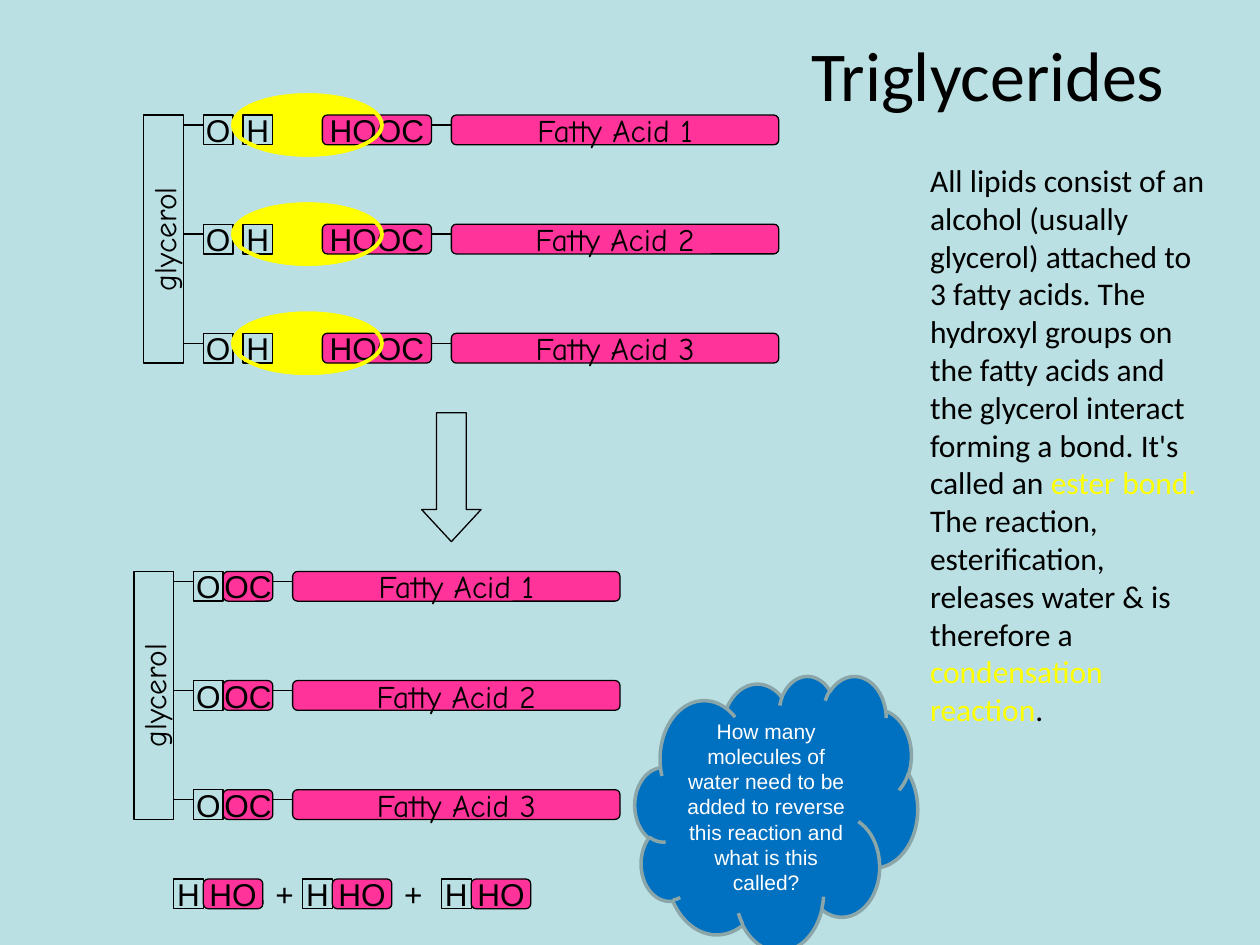
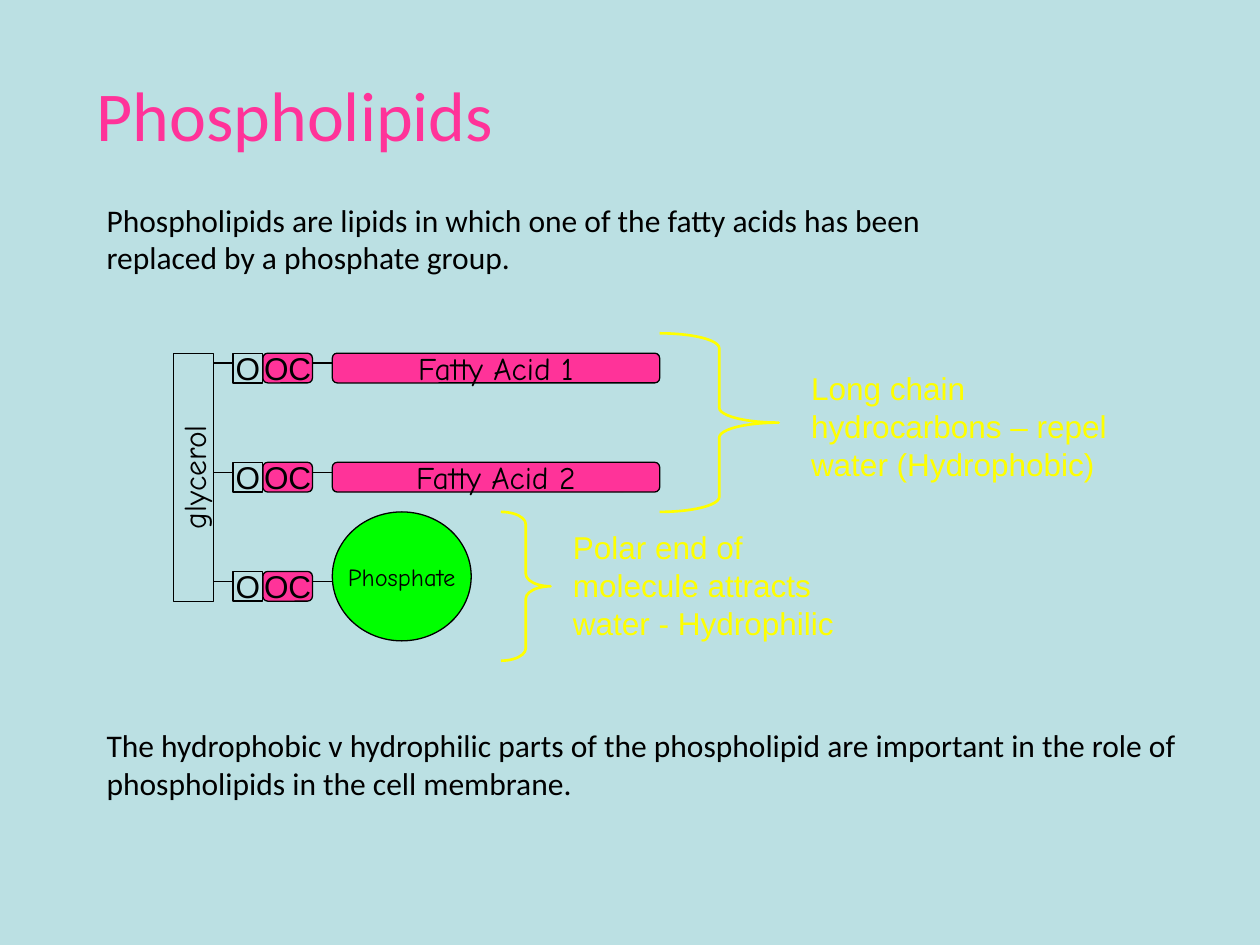
from typing import NamedTuple, Optional

from pptx import Presentation
from pptx import util as u
from pptx.dml.color import RGBColor
from pptx.enum import shapes, text
from pptx.oxml import parse_xml
from pptx.oxml.ns import nsdecls

PALE = RGBColor(0xBB, 0xE0, 0xE3)
PINK = RGBColor(0xFF, 0x33, 0x99)
YELLOW = RGBColor(0xFF, 0xFF, 0x00)
GREEN = RGBColor(0x00, 0xFF, 0x00)
BLUE = RGBColor(0x00, 0x70, 0xC0)
GREY = RGBColor(0x8A, 0xA6, 0xA8)
BLACK = RGBColor(0x00, 0x00, 0x00)
WHITE = RGBColor(0xFF, 0xFF, 0xFF)

ATOM_FONT, PROSE_FONT, NAME_FONT = "Arial", "Calibri", "Comic Neue"
SHAPE = shapes.MSO_SHAPE

CELL_MM = 2  # the slide is 127 columns wide
BAR = 3  # height of an atom or a chain
PITCH = 11  # rows from one chain to the next
BACKBONE_COLS, BACKBONE_ROWS = 4, 25
CHAIN_COLS = 33


class Box(NamedTuple):
    col: float
    row: float
    cols: float
    rows: float


class Look(NamedTuple):
    kind: shapes.MSO_SHAPE
    fill: Optional[RGBColor]
    line: RGBColor = BLACK
    weight: float = 0.75
    adjust: tuple[float, ...] = ()


class Type(NamedTuple):
    font: str
    size: int = 18
    color: RGBColor = BLACK


class Part(NamedTuple):
    """A labelled piece of a molecule, placed in columns from its left edge."""
    label: str
    col: float
    cols: float
    look: Look


class Bond(NamedTuple):
    start: float
    end: float


ATOM = Look(SHAPE.RECTANGLE, PALE)
PINK_BAR = Look(SHAPE.ROUNDED_RECTANGLE, PINK, adjust=(0.167,))
ARROW = Look(SHAPE.DOWN_ARROW, PALE, adjust=(0.5, 0.54))
HIGHLIGHT = Look(SHAPE.OVAL, YELLOW, YELLOW, 2.25)
RING = HIGHLIGHT._replace(fill=None)
PHOSPHATE = Look(SHAPE.OVAL, GREEN)
CLOUD = Look(SHAPE.CLOUD, BLUE, GREY, 2)
BRACE = Look(SHAPE.RIGHT_BRACE, None, YELLOW, 1.5)

ATOM_TYPE = Type(ATOM_FONT)
NAME_TYPE = Type(NAME_FONT)
PROSE = Type(PROSE_FONT)
TITLE = Type(PROSE_FONT, 40)
NOTE = Type(ATOM_FONT, color=YELLOW)

OXYGEN = Part("O", 6, BAR, ATOM)
HYDROGEN = Part("H", 10, BAR, ATOM)
ACID_GROUP = Part("HOOC", 18, 11, PINK_BAR)
ESTER_GROUP = Part("OC", 9, 5, PINK_BAR)
FREE_BONDS = (Bond(4, 6), Bond(9, 10), Bond(29, 31))
ESTER_BONDS = (Bond(4, 6), Bond(14, 16))
FREE_CHAIN, ESTER_CHAIN = 31, 16


def cells(count: float) -> u.Length:
    return u.Mm(count * CELL_MM)


def place(box: Box) -> list[u.Length]:
    return [cells(count) for count in box]


def set_type(font, style: Type) -> None:
    font.name, font.size = style.font, u.Pt(style.size)
    font.color.rgb = style.color


def add_shape(page, box: Box, look: Look, label: str = "",
              style: Type = ATOM_TYPE, wrap: bool = False):
    shape = page.shapes.add_shape(look.kind, *place(box))
    shape.shadow.inherit = False
    for index, value in enumerate(look.adjust):
        shape.adjustments[index] = value
    if look.fill is None:
        shape.fill.background()
    else:
        shape.fill.solid()
        shape.fill.fore_color.rgb = look.fill
    shape.line.color.rgb = look.line
    shape.line.width = u.Pt(look.weight)
    if label:
        frame = shape.text_frame
        frame.word_wrap = wrap
        frame.vertical_anchor = text.MSO_ANCHOR.MIDDLE
        para = frame.paragraphs[0]
        para.text = label
        para.alignment = text.PP_ALIGN.CENTER
        set_type(para.font, style)
    return shape


def add_text(page, box: Box, style: Type, *pieces: str) -> None:
    """Write the pieces in one paragraph, every second one in yellow."""
    frame = page.shapes.add_textbox(*place(box)).text_frame
    frame.word_wrap = True
    frame.auto_size = text.MSO_AUTO_SIZE.SHAPE_TO_FIT_TEXT
    para = frame.paragraphs[0]
    set_type(para.font, style)
    for index, piece in enumerate(pieces):
        span = para.add_run()
        span.text = piece
        if index % 2:
            span.font.color.rgb = YELLOW


def add_bond(page, start: float, end: float, row: float) -> None:
    bond = page.shapes.add_connector(
        shapes.MSO_CONNECTOR.STRAIGHT,
        cells(start), cells(row), cells(end), cells(row))
    bond.line.color.rgb = BLACK
    bond.line.width = u.Pt(0.75)
    bond.element.spPr.append(parse_xml(f"<a:effectLst {nsdecls('a')}/>"))


def add_part(page, part: Part, left: float, row: float) -> None:
    add_shape(page, Box(left + part.col, row, part.cols, BAR), part.look, part.label)


def add_glycerol(page, left: float, top: float) -> None:
    """Draw the upright backbone as a wide bar turned a quarter left."""
    shift = (BACKBONE_ROWS - BACKBONE_COLS) / 2
    box = Box(left - shift, top + shift, BACKBONE_ROWS, BACKBONE_COLS)
    add_shape(page, box, ATOM, "glycerol", NAME_TYPE).rotation = 270


def add_molecule(page, left: float, top: float, bonds: tuple[Bond, ...],
                 chain_col: float, chains: int = 3, free: bool = False) -> None:
    """Draw glycerol with three branches; free acids are not yet joined to it."""
    add_glycerol(page, left, top)
    for index in range(3):
        row = top + index * PITCH
        for bond in bonds:
            add_bond(page, left + bond.start, left + bond.end, row + 1)
        add_part(page, OXYGEN, left, row)
        if free:
            oval = Box(left + 9, row - 2, 15, 6)
            add_shape(page, oval, HIGHLIGHT)
            add_part(page, HYDROGEN, left, row)
            add_part(page, ACID_GROUP, left, row)
            add_shape(page, oval, RING)
        else:
            add_part(page, ESTER_GROUP, left, row)
        if index < chains:
            add_shape(page, Box(left + chain_col, row, CHAIN_COLS, BAR),
                      PINK_BAR, f"Fatty Acid {index + 1}", NAME_TYPE)


def add_page(deck):
    page = deck.slides.add_slide(deck.slide_layouts[6])
    page.background.fill.solid()
    page.background.fill.fore_color.rgb = PALE
    return page


def add_triglycerides(deck) -> None:
    page = add_page(deck)
    add_molecule(page, 14.5, 11.6, FREE_BONDS, FREE_CHAIN, free=True)
    add_shape(page, Box(42.5, 41.6, 6, 13), ARROW)
    add_molecule(page, 13.5, 57.6, ESTER_BONDS, ESTER_CHAIN)

    water_row = 88.6
    for left in (17.5, 30.5, 44.5):
        add_part(page, Part("H", 0, BAR, ATOM), left, water_row)
        add_part(page, Part("HO", BAR, 6, PINK_BAR), left, water_row)
    for left in (26.5, 39.5):
        add_text(page, Box(left, water_row - 1, 3, 5), ATOM_TYPE, "+")

    add_text(page, Box(92.5, 15.6, 31, 58.9), PROSE,
             "All lipids consist of an alcohol (usually glycerol) attached to "
             "3 fatty acids. The hydroxyl groups on the fatty acids and the "
             "glycerol interact forming a bond. It's called an ",
             "ester bond. ",
             "The reaction, esterification, releases water & is therefore a ",
             "condensation reaction", ".")
    add_text(page, Box(80.5, 2.6, 46.5, 9.8), TITLE, "Triglycerides")
    add_shape(page, Box(64, 68.1, 28.5, 27.7), CLOUD,
              "How many molecules of water need to be added to reverse this "
              "reaction and what is this called?",
              Type(ATOM_FONT, 12, WHITE), wrap=True)


def add_phospholipids(deck) -> None:
    page = add_page(deck)
    add_text(page, Box(8.5, 6.6, 53, 9.8), TITLE._replace(color=PINK), "Phospholipids")
    add_text(page, Box(9.5, 19.6, 95, 8.9), PROSE,
             "Phospholipids are lipids in which one of the fatty acids has "
             "been replaced by a phosphate group.")
    add_molecule(page, 17.5, 35.6, ESTER_BONDS, ESTER_CHAIN, chains=2)
    add_shape(page, Box(33.5, 51.6, 14, 13), PHOSPHATE, "Phosphate", Type(NAME_FONT, 14))
    add_shape(page, Box(66.5, 33.6, 12, 18), BRACE._replace(adjust=(0.125, 0.5)))
    add_shape(page, Box(50.5, 51.6, 5, 15), BRACE._replace(adjust=(0.25, 0.5)))
    add_text(page, Box(80.5, 36.6, 33, 12.7), NOTE,
             "Long chain hydrocarbons – repel water (Hydrophobic)")
    add_text(page, Box(56.5, 52.6, 33, 12.7), NOTE,
             "Polar end of molecule attracts water - Hydrophilic")
    add_text(page, Box(9.5, 72.6, 113, 8.9), PROSE,
             "The hydrophobic v hydrophilic parts of the phospholipid are "
             "important in the role of phospholipids in the cell membrane.")


def main() -> None:
    deck = Presentation()
    deck.slide_width, deck.slide_height = u.Inches(10), u.Inches(7.5)
    add_triglycerides(deck)
    add_phospholipids(deck)
    deck.save("out.pptx")


if __name__ == "__main__":
    main()
